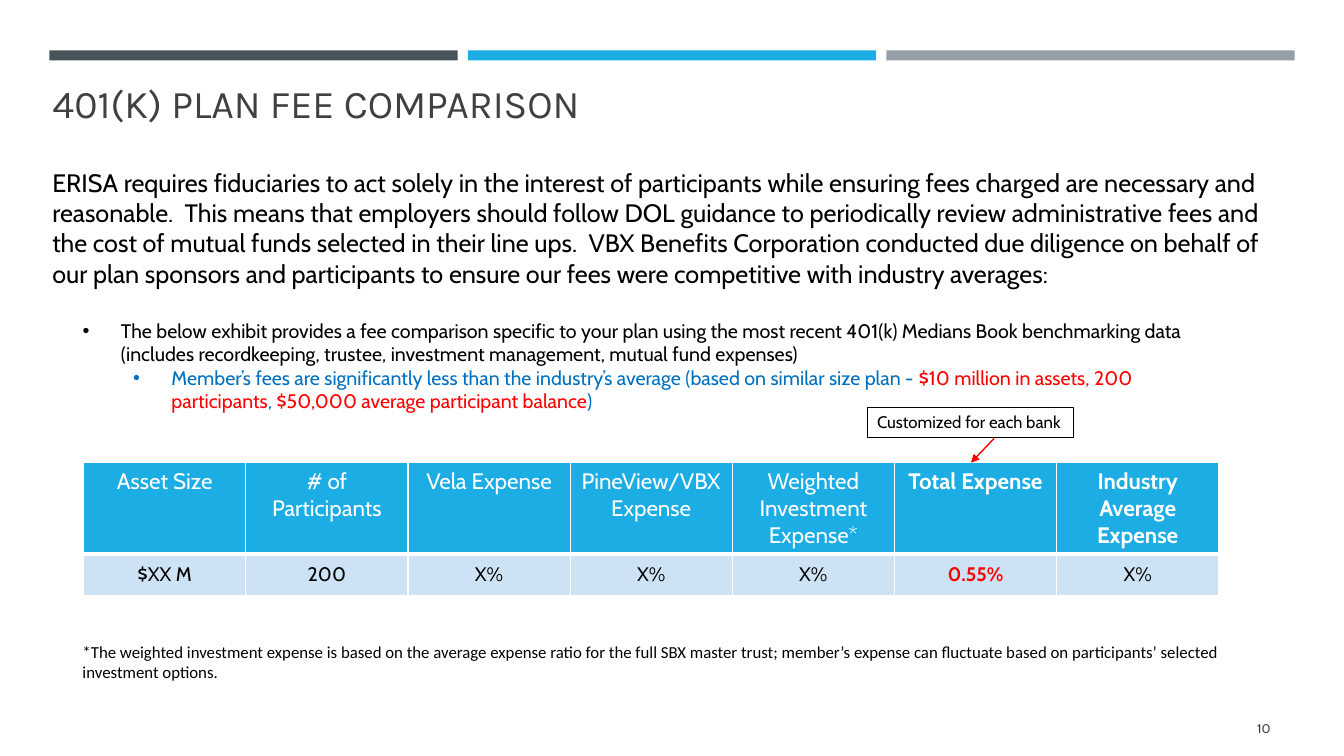
"""Build the plan fee comparison slide."""
from dataclasses import dataclass
from typing import Any

import pptx
import pptx.dml.color
import pptx.enum.shapes
import pptx.enum.text
import pptx.oxml
import pptx.oxml.ns
import pptx.util
from pptx.util import Inches

HUES = {"slate": "465359", "blue": "1CADE4", "gray": "969FA7", "ink": "404040",
        "black": "000000", "white": "FFFFFF", "pale": "CDE3F5",
        "link": "0070C0", "red": "FF0000"}
ALIGN = pptx.enum.text.PP_ALIGN
ANCHOR = pptx.enum.text.MSO_ANCHOR
RECT = pptx.enum.shapes.MSO_SHAPE.RECTANGLE


@dataclass
class Box:
    left: float
    top: float
    width: float
    height: float


@dataclass
class Note:
    box: Box
    text: str
    size: float
    font: str = "Cabin"
    hue: str = "black"
    align: Any = ALIGN.LEFT
    anchor: Any = ANCHOR.TOP


@dataclass
class Point:
    level: int
    indent: float
    spans: list[tuple[str, str]]


@dataclass
class Cell:
    text: str
    bold: bool = False
    hue: str = "black"


BARS = ["slate", "blue", "gray"]
TITLE = Note(Box(0.42, 0, 12.06, 1.3), "401(K) PLAN FEE COMPARISON", 28,
             "Karla", "ink", anchor=ANCHOR.BOTTOM)
CALL = Note(Box(8.6, 4.04, 2.05, 0.3), "Customized for each bank", 12)
NOTES = [
    Note(Box(11.55, 7.03, 1.15, 0.4), "10", 9, "Cabin", "ink",
         ALIGN.RIGHT, ANCHOR.MIDDLE),
    Note(Box(0.42, 1.61, 12.18, 1.31),
         "ERISA requires fiduciaries to act solely in the interest of participants "
         "while ensuring fees charged are necessary and reasonable.  This means that "
         "employers should follow DOL guidance to periodically review administrative "
         "fees and the cost of mutual funds selected in their line ups.  VBX Benefits "
         "Corporation conducted due diligence on behalf of our plan sponsors and "
         "participants to ensure our fees were competitive with industry averages:", 18),
    Note(Box(0.72, 6.32, 12.27, 0.5),
         "*The weighted investment expense is based on the average expense ratio for "
         "the full SBX master trust; member’s expense can fluctuate based on "
         "participants’ selected investment options.", 12, "Calibri"),
]
POINTS = [
    Point(0, 0.38, [
        ("The below exhibit provides a fee comparison specific to your plan using the "
         "most recent 401(k) Medians Book benchmarking data (includes recordkeeping, "
         "trustee, investment management, mutual fund expenses)", "black")]),
    Point(1, 0.88, [
        ("Member’s fees are significantly less than the industry’s average "
         "(based on similar size plan - ", "link"),
        ("$10 million in assets, 200 participants", "red"),
        (", ", "link"),
        ("$50,000 average participant balance", "red"),
        (")", "link")]),
]
HEADS = [Cell(text, bold, "white") for text, bold in [
    ("Asset Size", False), ("# of Participants", False), ("Vela Expense", False),
    ("PineView/VBX Expense", False), ("Weighted Investment Expense*", False),
    ("Total Expense", True), ("Industry Average Expense", True)]]
COSTS = [Cell("$XX M"), Cell("200"), Cell("X%"), Cell("X%"), Cell("X%"),
         Cell("0.55%", True, "red"), Cell("X%")]


def tint(name: str) -> Any:
    """Return the named colour."""
    return pptx.dml.color.RGBColor.from_string(HUES[name])


def style(run: Any, size: float, hue: str, font: str = "Cabin", bold: bool = False) -> None:
    """Format one run."""
    run.font.size = pptx.util.Pt(size)
    run.font.name = font
    run.font.bold = bold
    run.font.color.rgb = tint(hue)


def place(shape: Any, box: Box) -> None:
    """Move a shape to its box."""
    shape.left, shape.top = Inches(box.left), Inches(box.top)
    shape.width, shape.height = Inches(box.width), Inches(box.height)


def write(shape: Any, note: Note, wrap: bool = True) -> None:
    """Place a shape and fill it with the text of a note."""
    place(shape, note.box)
    frame = shape.text_frame
    frame.text = note.text
    frame.word_wrap = wrap
    frame.auto_size = pptx.enum.text.MSO_AUTO_SIZE.NONE
    frame.vertical_anchor = note.anchor
    frame.paragraphs[0].alignment = note.align
    style(frame.paragraphs[0].runs[0], note.size, note.hue, note.font)


def block(shapes: Any, box: Box) -> Any:
    """Add a plain rectangle."""
    shape = shapes.add_shape(RECT, 0, 0, 0, 0)
    place(shape, box)
    shape.shadow.inherit = False
    return shape


def mark(para: Any, point: Point) -> None:
    """Fill a paragraph as a bullet point."""
    para.level = point.level
    para.space_before = pptx.util.Pt(0)
    props = para._p.get_or_add_pPr()
    props.set("marL", str(Inches(point.indent)))
    props.set("indent", str(Inches(-0.38)))
    for tag, key, value in (("buFont", "typeface", "Arial"), ("buChar", "char", "•")):
        props.append(pptx.oxml.parse_xml(
            f'<a:{tag} {pptx.oxml.ns.nsdecls("a")} {key}="{value}"/>'))
    for text, hue in point.spans:
        run = para.add_run()
        run.text = text
        style(run, 14, hue)


def edge(cell: Any, widths: dict[str, float]) -> None:
    """Give a table cell white borders."""
    props = cell._tc.get_or_add_tcPr()
    for side, width in widths.items():
        props.append(pptx.oxml.parse_xml(
            f'<a:ln{side} {pptx.oxml.ns.nsdecls("a")} w="{int(pptx.util.Pt(width))}">'
            f'<a:solidFill><a:srgbClr val="{HUES["white"]}"/></a:solidFill></a:ln{side}>'))


def grid(shapes: Any) -> None:
    """Add the fee table."""
    table = shapes.add_table(2, len(HEADS), Inches(0.83), Inches(4.59),
                             Inches(11.26), Inches(1.3)).table
    rows = [(HEADS, 0.89, 16, "blue", ANCHOR.TOP, 1, 3),
            (COSTS, 0.41, 14, "pale", ANCHOR.MIDDLE, 3, 1)]
    for row, (cells, height, size, fill, anchor, top, base) in enumerate(rows):
        table.rows[row].height = Inches(height)
        for col, item in enumerate(cells):
            cell = table.cell(row, col)
            edge(cell, {"L": 1, "R": 1, "T": top, "B": base})
            cell.fill.solid()
            cell.fill.fore_color.rgb = tint(fill)
            cell.vertical_anchor = anchor
            cell.text_frame.text = item.text
            para = cell.text_frame.paragraphs[0]
            para.alignment = ALIGN.CENTER
            style(para.runs[0], size, item.hue, bold=item.bold)


def arrow(shapes: Any) -> None:
    """Add the red arrow from the callout to the table."""
    line = shapes.add_connector(pptx.enum.shapes.MSO_CONNECTOR.STRAIGHT,
                                Inches(9.86), Inches(4.35), Inches(9.63), Inches(4.59))
    line.line.color.rgb = tint("red")
    line.line.width = pptx.util.Pt(1)
    names = pptx.oxml.ns.nsdecls("a")
    props = line._element.spPr
    props.find(pptx.oxml.ns.qn("a:ln")).append(
        pptx.oxml.parse_xml(f'<a:tailEnd {names} type="triangle"/>'))
    props.append(pptx.oxml.parse_xml(f"<a:effectLst {names}/>"))


def main() -> None:
    """Build and save the slide."""
    deck = pptx.Presentation()
    deck.slide_width, deck.slide_height = Inches(13.33), Inches(7.5)
    slide = deck.slides.add_slide(deck.slide_layouts[1])
    shapes = slide.shapes
    for col, hue in enumerate(BARS):
        bar = block(shapes, Box(0.49 + 4.15 * col, 0.5, 4.05, 0.1))
        bar.fill.solid()
        bar.fill.fore_color.rgb = tint(hue)
        bar.line.fill.background()
    write(shapes.title, TITLE)
    for note in NOTES:
        write(shapes.add_textbox(0, 0, 0, 0), note)
    body = slide.placeholders[1]
    place(body, Box(0.72, 3.11, 11.53, 1.04))
    frame = body.text_frame
    frame.auto_size = pptx.enum.text.MSO_AUTO_SIZE.NONE
    for rank, point in enumerate(POINTS):
        mark(frame.add_paragraph() if rank else frame.paragraphs[0], point)
    grid(shapes)
    call = block(shapes, CALL.box)
    call.fill.background()
    call.line.color.rgb = tint("black")
    call.line.width = pptx.util.Pt(0.75)
    write(call, CALL, False)
    arrow(shapes)
    deck.save("out.pptx")


if __name__ == "__main__":
    main()
